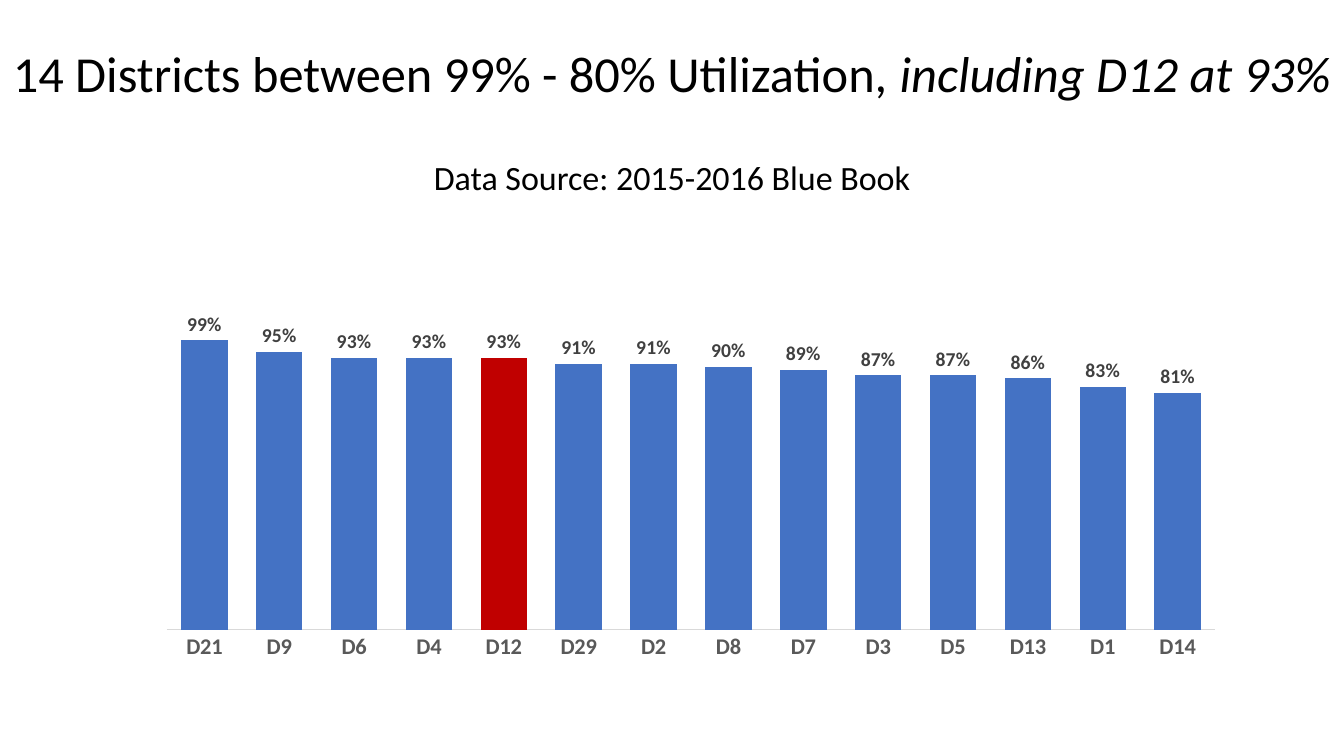
from pptx import Presentation, util as u
from pptx.chart.data import CategoryChartData
from pptx.dml.color import RGBColor
from pptx.enum import chart as ch, text as tx
from pptx.oxml import parse_xml
from pptx.oxml.ns import nsdecls

WIDE, HIGH = 13.33, 7.5
FONT = "Calibri"
HEAD = [
    (0, [("14 Districts between 99% - 80% Utilization, ", 36, False),
         ("including D12 at 93%", 36, True)]),
    (41, [("Data Source: 2015-2016 Blue Book", 24.3, False)]),
]
RATES = {
    "D21": 0.99, "D9": 0.95, "D6": 0.93, "D4": 0.93, "D12": 0.93,
    "D29": 0.91, "D2": 0.91, "D8": 0.90, "D7": 0.89, "D3": 0.87,
    "D5": 0.87, "D13": 0.86, "D1": 0.83, "D14": 0.81,
}
FOCUS = "D12"
PLOT = {"x": 0.064, "y": 0.199, "w": 0.904, "h": 0.7}


def tint(code):
    return RGBColor.from_string(code)


def style(font, size, color, bold=False):
    font.name, font.size, font.bold = FONT, u.Pt(size), bold
    font.color.rgb = tint(color)


def place(x, y, w, h):
    return [u.Inches(n) for n in (x, y, w, h)]


def add_head(slide):
    title = slide.shapes.title
    title.left, title.top, title.width, title.height = place(0, 0.55, WIDE, 1.45)
    frame = title.text_frame
    frame.word_wrap = True
    frame.auto_size = tx.MSO_AUTO_SIZE.NONE
    frame.vertical_anchor = tx.MSO_ANCHOR.MIDDLE
    frame.margin_left = frame.margin_right = frame.margin_top = 0
    frame.margin_bottom = u.Inches(0.1)
    for row, (gap, runs) in enumerate(HEAD):
        para = frame.add_paragraph() if row else frame.paragraphs[0]
        para.alignment = tx.PP_ALIGN.CENTER
        para.line_spacing = 0.9
        para.space_before = u.Pt(gap)
        for words, size, slant in runs:
            run = para.add_run()
            run.text = words
            style(run.font, size, "000000")
            run.font.italic = slant


def add_bars(slide):
    data = CategoryChartData(number_format="0%")
    data.categories = list(RATES)
    data.add_series("Series 1", list(RATES.values()))
    chart = slide.shapes.add_chart(
        ch.XL_CHART_TYPE.COLUMN_CLUSTERED, *place(0.92, 1.78, 11.5, 4.97), data
    ).chart
    chart.has_legend = chart.has_title = False
    style(chart.font, 10, "000000")

    base = chart.category_axis
    base.major_tick_mark = ch.XL_TICK_MARK.NONE
    base.format.line.color.rgb = tint("D9D9D9")
    base.format.line.width = u.Pt(0.75)
    style(base.tick_labels.font, 16, "595959", True)

    scale = chart.value_axis
    scale.minimum_scale, scale.maximum_scale = 0, 1.2
    scale.has_major_gridlines = False
    scale.visible = False

    plot = chart.plots[0]
    plot.gap_width, plot.overlap = 61, -27
    plot.vary_by_categories = False
    bars = plot.series[0]
    bars.format.fill.solid()
    bars.format.fill.fore_color.rgb = tint("4472C4")
    mark = bars.points[list(RATES).index(FOCUS)].format.fill
    mark.solid()
    mark.fore_color.rgb = tint("C00000")

    tags = bars.data_labels
    tags.show_value = True
    tags.number_format, tags.number_format_is_linked = "0%", False
    tags.position = ch.XL_LABEL_POSITION.OUTSIDE_END
    style(tags.font, 14, "404040", True)

    modes = "".join(f'<c:{k}Mode val="edge"/>' for k in "xy")
    sides = "".join(f'<c:{k} val="{v}"/>' for k, v in PLOT.items())
    area = chart.element.chart.plotArea
    for old in area.xpath("c:layout"):
        area.remove(old)
    area.insert(0, parse_xml(
        f'<c:layout {nsdecls("c")}><c:manualLayout><c:layoutTarget val="inner"/>'
        f'{modes}{sides}</c:manualLayout></c:layout>'))


def main():
    deck = Presentation()
    deck.slide_width, deck.slide_height = u.Inches(WIDE), u.Inches(HIGH)
    slide = deck.slides.add_slide(deck.slide_layouts[5])
    add_head(slide)
    add_bars(slide)
    deck.save("out.pptx")


if __name__ == "__main__":
    main()
